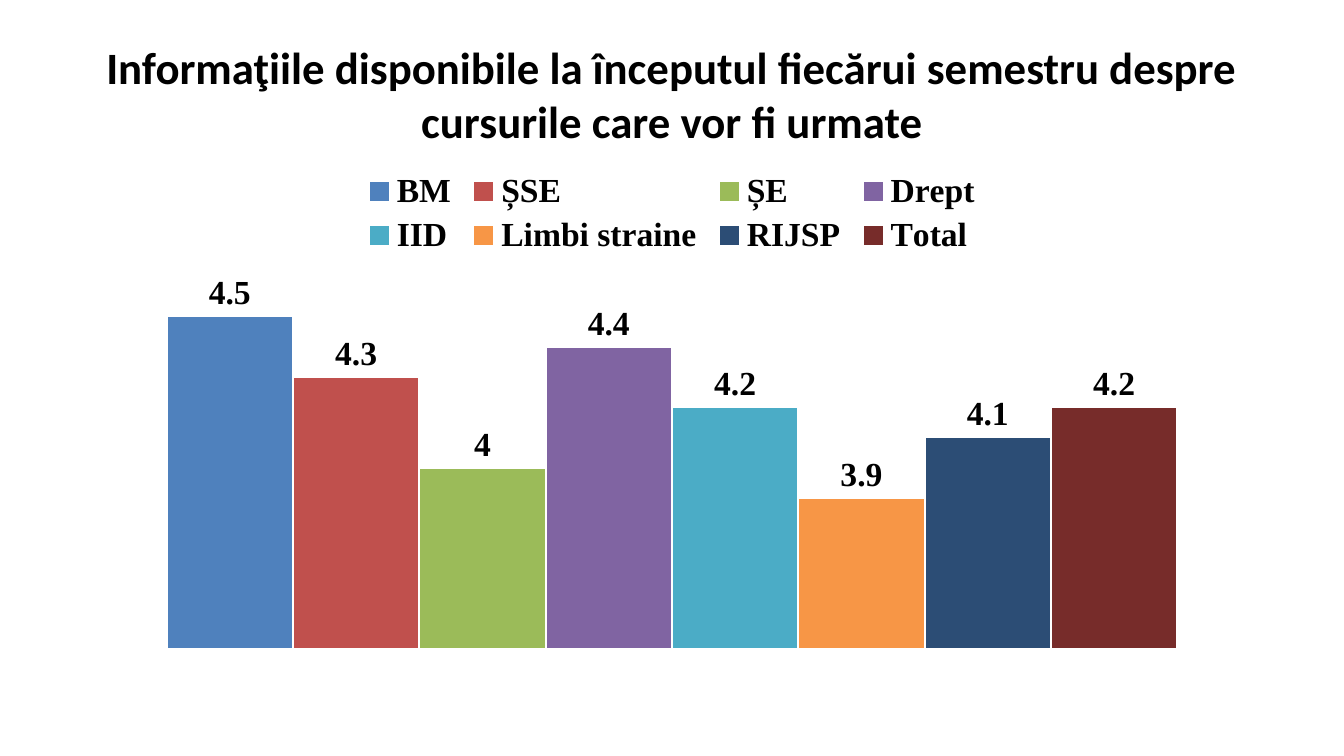
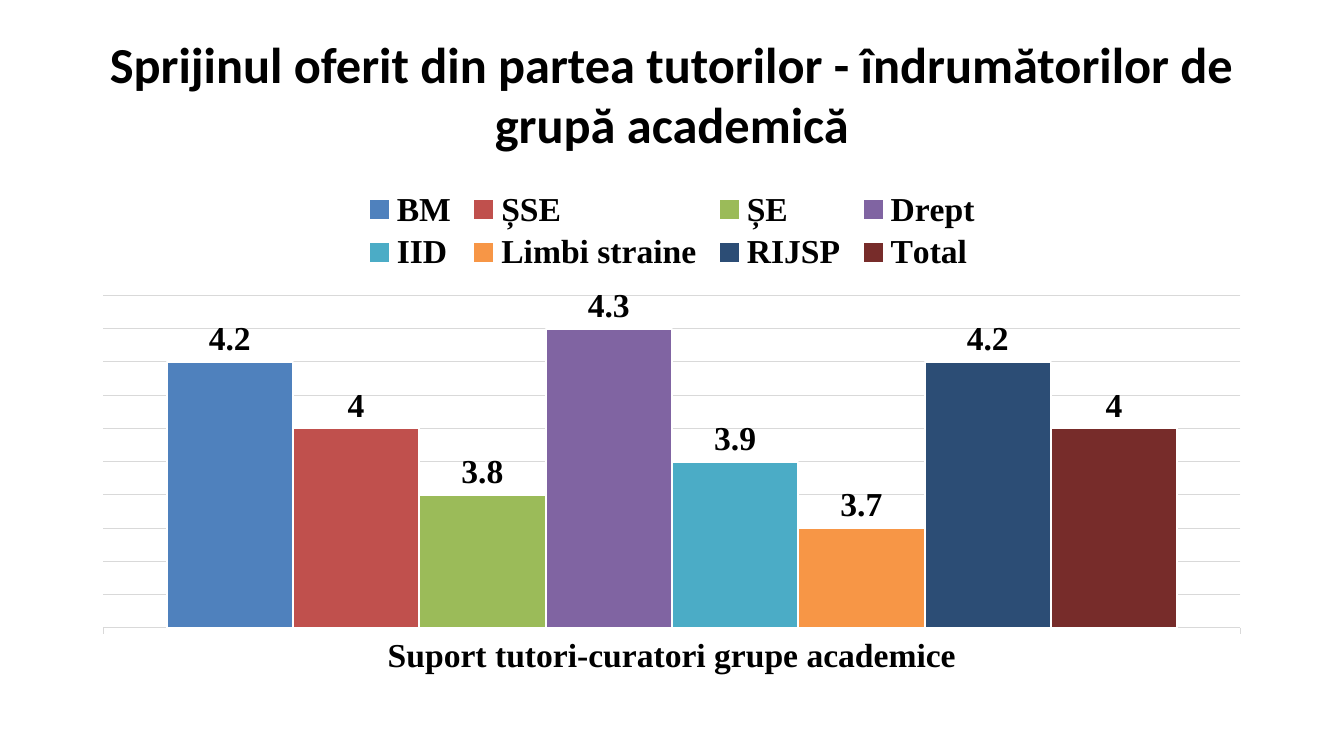
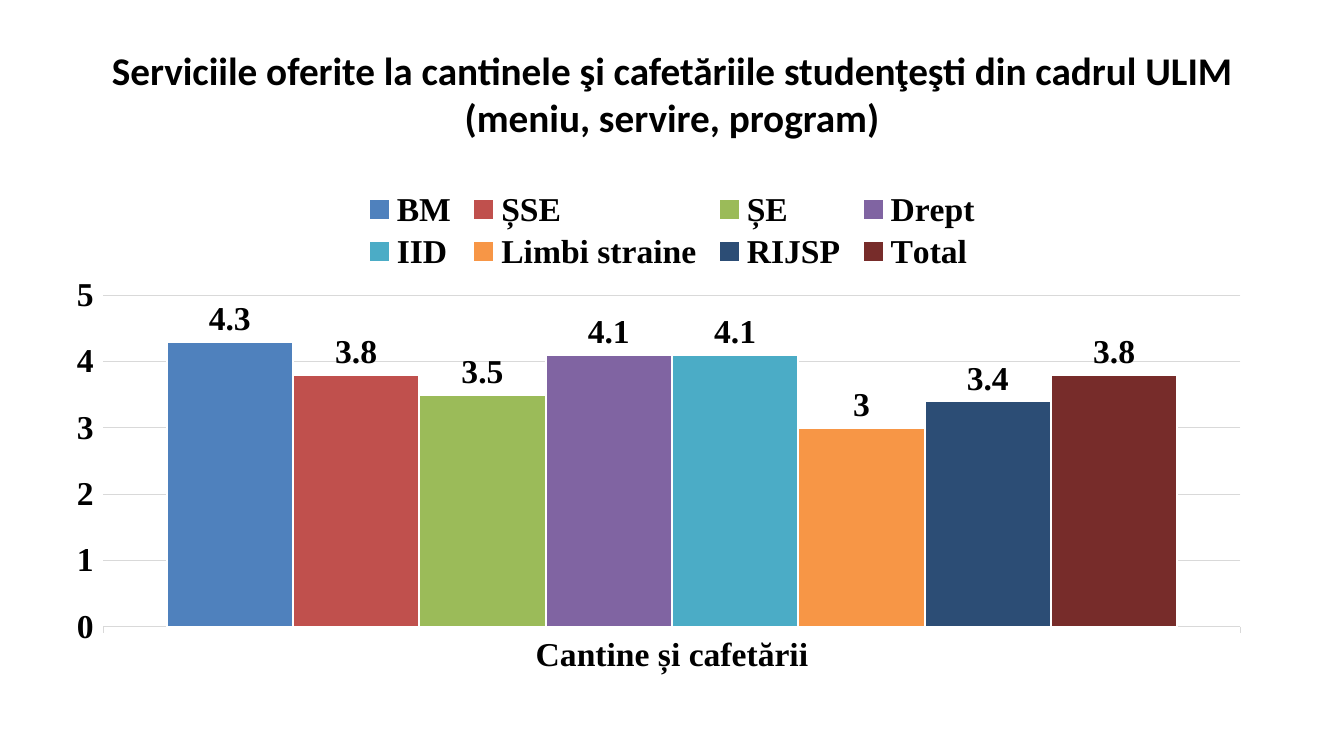
import pptx
import pptx.chart.data
import pptx.dml.color
import pptx.enum.chart
import pptx.enum.text
import pptx.oxml
import pptx.oxml.ns
import pptx.util

COLORS = {
    "text": "000000",
    "paper": "FFFFFF",
    "grid": "D9D9D9",
    "BM": "4F81BD",
    "ȘSE": "C0504D",
    "ȘE": "9BBB59",
    "Drept": "8064A2",
    "IID": "4BACC6",
    "Limbi straine": "F79646",
    "RIJSP": "2C4D75",
    "Total": "772C2A",
}
FACULTIES = list(COLORS)[3:]
WIDTH, HEIGHT = pptx.util.Inches(13.33), pptx.util.Inches(7.5)
MARGIN = int(WIDTH * 0.05)
TITLE_TOP, TITLE_HEIGHT = int(HEIGHT * 0.04), pptx.util.Inches(1.25)
CHART_BOTTOM = pptx.util.Inches(6.7)

SURVEYS = [
    {"title": "Informaţiile disponibile la începutul fiecărui semestru despre cursurile care vor fi urmate",
     "title_size": 32, "category": "1", "values": [4.5, 4.3, 4, 4.4, 4.2, 3.9, 4.1, 4.2],
     "scale": (3.4, 4.6, 0.2), "top": 1.55, "plot": (0.03, 0.25, 0.94, 0.7),
     "grid": False, "category_axis": False, "value_axis": False},
    {"title": "Sprijinul oferit din partea tutorilor - îndrumătorilor de grupă academică",
     "title_size": 36, "category": "Suport tutori-curatori grupe academice",
     "values": [4.2, 4, 3.8, 4.3, 3.9, 3.7, 4.2, 4],
     "scale": (3.4, 4.4, 0.1), "top": 1.75, "plot": (0.03, 0.24, 0.94, 0.67),
     "grid": True, "category_axis": True, "value_axis": False},
    {"title": "Serviciile oferite la cantinele şi cafetăriile studenţeşti din cadrul ULIM (meniu, servire, program)",
     "title_size": 28, "category": "Cantine și cafetării",
     "values": [4.3, 3.8, 3.5, 4.1, 4.1, 3, 3.4, 3.8],
     "scale": (0, 5, 1), "top": 1.75, "plot": (0.03, 0.24, 0.94, 0.67),
     "grid": True, "category_axis": True, "value_axis": True},
]


def write_text(frame, text, size, name="Calibri", bold=True, color="text"):
    frame.text = text
    frame.word_wrap = True
    frame.auto_size = pptx.enum.text.MSO_AUTO_SIZE.NONE
    frame.vertical_anchor = pptx.enum.text.MSO_ANCHOR.MIDDLE
    para = frame.paragraphs[0]
    para.alignment = pptx.enum.text.PP_ALIGN.CENTER
    font = para.runs[0].font
    font.size, font.name, font.bold = pptx.util.Pt(size), name, bold
    font.color.rgb = pptx.dml.color.RGBColor.from_string(COLORS[color])


def manual_layout(shares, inner=False):
    """Return a c:layout element placing a chart part at shares (x, y, w, h)."""
    target = '<c:layoutTarget val="inner"/>' if inner else ""
    sizes = "".join(f'<c:{key} val="{share}"/>' for key, share in zip("xywh", shares))
    return pptx.oxml.parse_xml(
        f'<c:layout {pptx.oxml.ns.nsdecls("c")}><c:manualLayout>{target}'
        f'<c:xMode val="edge"/><c:yMode val="edge"/>{sizes}</c:manualLayout></c:layout>')


deck = pptx.Presentation()
deck.slide_width, deck.slide_height = WIDTH, HEIGHT
grid_color = pptx.dml.color.RGBColor.from_string(COLORS["grid"])
paper_color = pptx.dml.color.RGBColor.from_string(COLORS["paper"])

for survey in SURVEYS:
    page = deck.slides.add_slide(deck.slide_layouts.get_by_name("Title Only"))
    title = page.shapes.title
    title.left, title.top = MARGIN, TITLE_TOP
    title.width, title.height = WIDTH - 2 * MARGIN, TITLE_HEIGHT
    write_text(title.text_frame, survey["title"], size=survey["title_size"])

    data = pptx.chart.data.CategoryChartData()
    data.categories = [survey["category"]]
    for faculty, value in zip(FACULTIES, survey["values"]):
        data.add_series(faculty, [value])
    top = pptx.util.Inches(survey["top"])
    chart = page.shapes.add_chart(
        pptx.enum.chart.XL_CHART_TYPE.COLUMN_CLUSTERED,
        MARGIN, top, WIDTH - 2 * MARGIN, CHART_BOTTOM - top, data).chart
    chart.has_title = False
    chart.font.size, chart.font.name, chart.font.bold = pptx.util.Pt(24), "Times New Roman", True
    chart.font.color.rgb = pptx.dml.color.RGBColor.from_string(COLORS["text"])

    plot = chart.plots[0]
    plot.gap_width, plot.overlap, plot.vary_by_categories = 100, 0, False
    plot.has_data_labels = True
    plot.data_labels.show_value = True
    plot.data_labels.position = pptx.enum.chart.XL_LABEL_POSITION.OUTSIDE_END
    for series in plot.series:
        series.format.fill.solid()
        series.format.fill.fore_color.rgb = pptx.dml.color.RGBColor.from_string(COLORS[series.name])
        series.format.line.color.rgb = paper_color
        series.format.line.width = pptx.util.Pt(1.5)

    category_axis, value_axis = chart.category_axis, chart.value_axis
    category_axis.visible = survey["category_axis"]
    category_axis.format.line.color.rgb = grid_color
    category_axis.format.line.width = pptx.util.Pt(0.75)
    value_axis.visible = survey["value_axis"]
    value_axis.format.line.fill.background()
    value_axis.minimum_scale, value_axis.maximum_scale, value_axis.major_unit = survey["scale"]
    value_axis.has_major_gridlines = survey["grid"]
    if survey["grid"]:
        value_axis.major_gridlines.format.line.color.rgb = grid_color
        value_axis.major_gridlines.format.line.width = pptx.util.Pt(0.75)

    chart.has_legend = True
    chart.legend.position = pptx.enum.chart.XL_LEGEND_POSITION.TOP
    chart.legend.include_in_layout = False
    chart.legend._element.find(pptx.oxml.ns.qn("c:legendPos")).addnext(
        manual_layout((0.24, 0.02, 0.52, 0.18)))
    plot_area = plot._element.getparent()
    for layout in plot_area.findall(pptx.oxml.ns.qn("c:layout")):
        plot_area.remove(layout)
    plot_area.insert(0, manual_layout(survey["plot"], inner=True))

deck.save("out.pptx")
